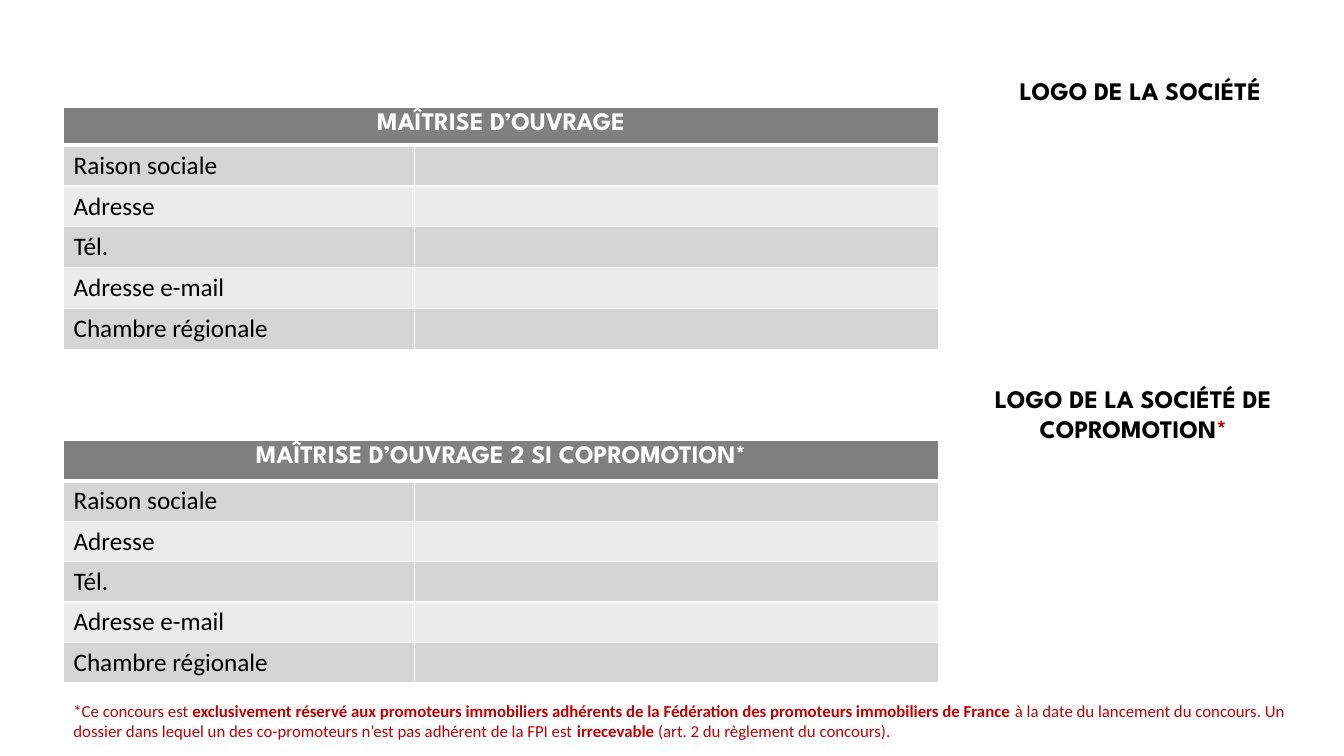
from lxml import etree
from pptx import Presentation
from pptx.dml.color import RGBColor
from pptx.enum.text import MSO_AUTO_SIZE, PP_ALIGN
from pptx.oxml.ns import qn
from pptx.util import Inches, Pt

CENTER, LEFT = PP_ALIGN.CENTER, PP_ALIGN.LEFT
GROW = MSO_AUTO_SIZE.SHAPE_TO_FIT_TEXT
COLORS = {"header": "808080", "dark": "D5D5D5", "light": "EBEBEB",
          "white": "FFFFFF", "black": "000000", "red": "C00000"}
TITLE_FONT, BODY_FONT = "League Spartan", "Calibri"
FIELDS = ["Raison sociale", "Adresse", "Tél.", "Adresse e-mail", "Chambre régionale"]
COL_WIDTHS = [3.48, 5.2]
ROW_HEIGHT = 0.4


def style_run(r, size, font, color, bold):
    r.font.size = Pt(size)
    r.font.name = font
    r.font.bold = bold
    r.font.color.rgb = RGBColor.from_string(COLORS[color])


def style_cell(cell, fill, bottom=1):
    """Fill the cell and draw white borders, the bottom one in the given points."""
    tcPr = cell._tc.get_or_add_tcPr()
    for tag, width in (("a:lnL", 1), ("a:lnR", 1), ("a:lnT", 1), ("a:lnB", bottom)):
        ln = etree.SubElement(tcPr, qn(tag), w=str(Pt(width)))
        solid = etree.SubElement(ln, qn("a:solidFill"))
        etree.SubElement(solid, qn("a:srgbClr"), val=COLORS["white"])
    cell.fill.solid()
    cell.fill.fore_color.rgb = RGBColor.from_string(COLORS[fill])


def write_cell(cell, text, font, color, bold, align=LEFT):
    cell.text_frame.text = text
    p = cell.text_frame.paragraphs[0]
    p.alignment = align
    style_run(p.runs[0], 18, font, color, bold)


def add_company_table(s, top, title, header_height):
    n_rows = len(FIELDS) + 1
    height = header_height + ROW_HEIGHT * len(FIELDS)
    table = s.shapes.add_table(n_rows, 2, Inches(0.63), Inches(top),
                               Inches(sum(COL_WIDTHS)), Inches(height)).table
    for col, width in zip(table.columns, COL_WIDTHS):
        col.width = Inches(width)
    for i, row in enumerate(table.rows):
        row.height = Inches(ROW_HEIGHT if i else header_height)
        fill = ("dark" if i % 2 else "light") if i else "header"
        for cell in row.cells:
            style_cell(cell, fill, bottom=1 if i else 3)
    table.cell(0, 0).merge(table.cell(0, 1))
    write_cell(table.cell(0, 0), title, TITLE_FONT, "white", True, CENTER)
    for i, field in enumerate(FIELDS, 1):
        write_cell(table.cell(i, 0), field, BODY_FONT, "black", False)
        table.cell(i, 1).text_frame.paragraphs[0].font.size = Pt(18)


def add_text(s, left, top, width, height, parts, size, font, align=LEFT):
    """Add a one-paragraph box; parts are (text, color, bold)."""
    tf = s.shapes.add_textbox(Inches(left), Inches(top),
                              Inches(width), Inches(height)).text_frame
    tf.word_wrap = True
    tf.auto_size = GROW
    p = tf.paragraphs[0]
    p.alignment = align
    for text, color, bold in parts:
        r = p.add_run()
        r.text = text
        style_run(r, size, font, color, bold)


def main():
    prs = Presentation()
    prs.slide_width, prs.slide_height = Inches(13.33), Inches(7.5)
    s = prs.slides.add_slide(prs.slide_layouts[6])

    add_company_table(s, 1.07, "MAÎTRISE D’OUVRAGE", 0.37)
    add_text(s, 9.64, 0.7, 3.34, 0.4, [("LOGO DE LA SOCIÉTÉ", "black", True)],
             18, TITLE_FONT, CENTER)
    add_text(s, 9.57, 3.75, 3.34, 0.71,
             [("LOGO DE LA SOCIÉTÉ DE COPROMOTION", "black", True), ("*", "red", True)],
             18, TITLE_FONT, CENTER)
    add_company_table(s, 4.37, "MAÎTRISE D’OUVRAGE 2 SI COPROMOTION*", 0.39)
    add_text(s, 0.63, 6.9, 12.34, 0.5, [
        ("*Ce concours est ", "red", False),
        ("exclusivement réservé aux promoteurs immobiliers adhérents de la "
         "Fédération des promoteurs immobiliers de France ", "red", True),
        ("à la date du lancement du concours. Un dossier dans lequel un des "
         "co-promoteurs n’est pas adhérent de la FPI est ", "red", False),
        ("irrecevable", "red", True),
        (" (art. 2 du règlement du concours).", "red", False),
    ], 12, BODY_FONT)

    prs.save("out.pptx")


if __name__ == "__main__":
    main()
